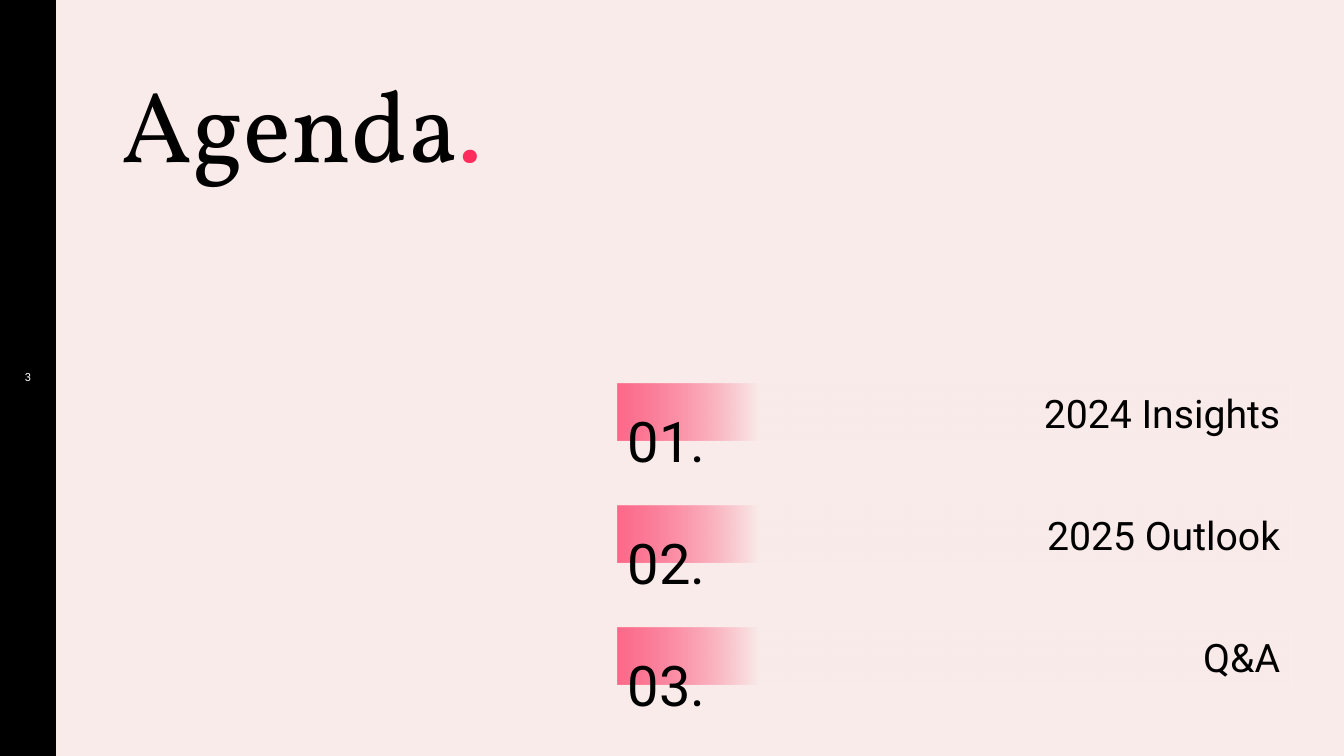
from dataclasses import dataclass

from lxml.etree import SubElement
from pptx import Presentation
from pptx.dml.color import RGBColor
from pptx.enum.shapes import MSO_SHAPE
from pptx.enum.text import MSO_ANCHOR, PP_ALIGN
from pptx.oxml.ns import qn
from pptx.util import Inches, Pt

TITLE = ("Agenda", ".")
PAGE_NUMBER = "3"
TOPICS = ["2024 Insights", "2025 Outlook", "Q&A"]

SLIDE_SIZE = (1344, 756)
SIDEBAR = (0, 0, 56, 756)
TITLE_BOX = (111, 57, 739, 132)
PAGE_NUMBER_BOX = (15, 365, 41, 39)
BAR_LEFT, BAR_TOP, BAR_WIDTH, BAR_HEIGHT = 618, 384, 672, 57
ROW_PITCH = 122
NUMBER_DROP, NUMBER_WIDTH, NUMBER_HEIGHT = 18, 140, 78


@dataclass(frozen=True)
class Theme:
    background: RGBColor = RGBColor.from_string("F9EBE9")
    ink: RGBColor = RGBColor.from_string("000000")
    accent: RGBColor = RGBColor.from_string("FE2B5D")
    light: RGBColor = RGBColor.from_string("FFFFFF")
    heading_font: str = "Vollkorn"
    body_font: str = "Roboto"
    title_size: int = 72
    number_size: int = 40
    topic_size: int = 28
    page_number_size: int = 8


THEME = Theme()


def px(length):
    return Inches(length / 100.8)


def style(span, size, color=THEME.ink, name=THEME.body_font):
    span.font.size = Pt(size)
    span.font.name = name
    span.font.color.rgb = color


def add_rectangle(page, area):
    shape = page.shapes.add_shape(MSO_SHAPE.RECTANGLE, *map(px, area))
    shape.shadow.inherit = False
    shape.line.fill.background()
    return shape


def add_label(page, area, text, size, color=THEME.ink):
    box = page.shapes.add_textbox(*map(px, area))
    box.text_frame.word_wrap = True
    box.text_frame.text = text
    style(box.text_frame.paragraphs[0].runs[0], size, color)


def fill_with_fade(shape):
    """Fade from translucent accent at the left into the background."""
    shape.fill.gradient()
    shape.fill.gradient_angle = 180
    plain, tinted = shape.fill.gradient_stops
    plain.position, plain.color.rgb = 0.79, THEME.background
    tinted.position, tinted.color.rgb = 1.0, THEME.accent
    tint = shape.element.spPr.findall(".//" + qn("a:srgbClr"))[1]
    SubElement(tint, qn("a:alpha"), val="67000")


def add_title(page):
    title = page.shapes.title
    title.left, title.top, title.width, title.height = map(px, TITLE_BOX)
    frame = title.text_frame
    frame.vertical_anchor = MSO_ANCHOR.TOP
    para = frame.paragraphs[0]
    para.alignment = PP_ALIGN.LEFT
    for text, color in zip(TITLE, (THEME.ink, THEME.accent)):
        span = para.add_run()
        span.text = text
        style(span, THEME.title_size, color, THEME.heading_font)


def add_topic(page, index, topic):
    top = BAR_TOP + index * ROW_PITCH
    bar = add_rectangle(page, (BAR_LEFT, top, BAR_WIDTH, BAR_HEIGHT))
    fill_with_fade(bar)
    bar.text_frame.text = topic
    bar.text_frame.vertical_anchor = MSO_ANCHOR.MIDDLE
    para = bar.text_frame.paragraphs[0]
    para.alignment = PP_ALIGN.RIGHT
    style(para.runs[0], THEME.topic_size)
    number_area = (BAR_LEFT, top + NUMBER_DROP, NUMBER_WIDTH, NUMBER_HEIGHT)
    add_label(page, number_area, f"{index + 1:02}.", THEME.number_size)


def main():
    deck = Presentation()
    deck.slide_width, deck.slide_height = map(px, SLIDE_SIZE)
    page = deck.slides.add_slide(deck.slide_layouts.get_by_name("Title Only"))
    page.background.fill.solid()
    page.background.fill.fore_color.rgb = THEME.background

    sidebar = add_rectangle(page, SIDEBAR)
    sidebar.fill.solid()
    sidebar.fill.fore_color.rgb = THEME.ink
    add_title(page)
    add_label(page, PAGE_NUMBER_BOX, PAGE_NUMBER, THEME.page_number_size, THEME.light)
    for index, topic in enumerate(TOPICS):
        add_topic(page, index, topic)

    deck.save("out.pptx")


if __name__ == "__main__":
    main()
